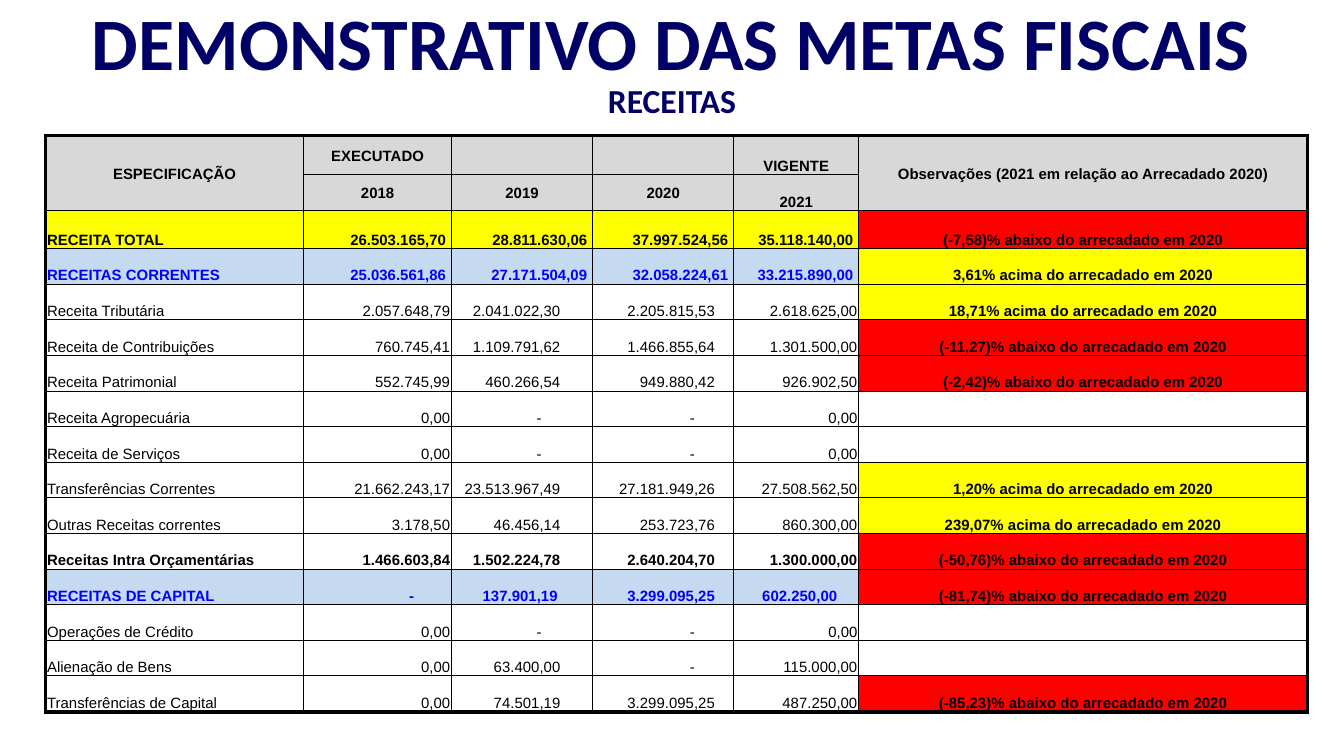
from lxml import etree
from pptx import Presentation
from pptx import util as u
from pptx.dml.color import RGBColor
from pptx.enum import shapes, text
from pptx.oxml import ns

NAVY = RGBColor(0x00, 0x00, 0x66)
BLACK = RGBColor(0x00, 0x00, 0x00)
WHITE = RGBColor(0xFF, 0xFF, 0xFF)
GRAY = RGBColor(0xD8, 0xD8, 0xD8)
YELLOW = RGBColor(0xFF, 0xFF, 0x00)
RED = RGBColor(0xFF, 0x00, 0x00)
LIGHT_BLUE = RGBColor(0xC5, 0xD9, 0xF1)
BLUE = RGBColor(0x00, 0x00, 0xFF)

# Content
HEADERS = [
    ["ESPECIFICAÇÃO", "EXECUTADO", "", "", "VIGENTE",
     "Observações (2021 em relação ao Arrecadado 2020)"],
    ["", "2018", "2019", "2020", "2021", ""],
]
# Row style, label, 2018, 2019, 2020, 2021, change against 2020
REVENUES = [
    ("total", "RECEITA TOTAL", "26.503.165,70", "28.811.630,06", "37.997.524,56", "35.118.140,00", "(-7,58)%"),
    ("group", "RECEITAS CORRENTES", "25.036.561,86", "27.171.504,09", "32.058.224,61", "33.215.890,00", "3,61%"),
    ("item", "Receita Tributária", "2.057.648,79", "2.041.022,30", "2.205.815,53", "2.618.625,00", "18,71%"),
    ("item", "Receita de Contribuições", "760.745,41", "1.109.791,62", "1.466.855,64", "1.301.500,00", "(-11,27)%"),
    ("item", "Receita Patrimonial", "552.745,99", "460.266,54", "949.880,42", "926.902,50", "(-2,42)%"),
    ("item", "Receita Agropecuária", "0,00", "-", "-", "0,00", ""),
    ("item", "Receita de Serviços", "0,00", "-", "-", "0,00", ""),
    ("item", "Transferências Correntes", "21.662.243,17", "23.513.967,49", "27.181.949,26", "27.508.562,50", "1,20%"),
    ("item", "Outras Receitas correntes", "3.178,50", "46.456,14", "253.723,76", "860.300,00", "239,07%"),
    ("intra", "Receitas Intra Orçamentárias", "1.466.603,84", "1.502.224,78", "2.640.204,70", "1.300.000,00", "(-50,76)%"),
    ("capital", "RECEITAS DE CAPITAL", "-", "137.901,19", "3.299.095,25", "602.250,00", "(-81,74)%"),
    ("item", "Operações de Crédito", "0,00", "-", "-", "0,00", ""),
    ("item", "Alienação de Bens", "0,00", "63.400,00", "-", "115.000,00", ""),
    ("item", "Transferências de Capital", "0,00", "74.501,19", "3.299.095,25", "487.250,00", "(-85,23)%"),
]
# Fill, font colour, bold, right margins of the four years
INDENTS = (0.01, 0.24, 0.14, 0.01)
STYLES = {
    "total": (YELLOW, BLACK, True, (0.04,) * 4),
    "group": (LIGHT_BLUE, BLUE, True, (0.04,) * 4),
    "item": (None, BLACK, False, INDENTS),
    "intra": (None, BLACK, True, INDENTS),
    "capital": (LIGHT_BLUE, BLUE, True, (0.01, 0.26, 0.14, 0.16)),
}
DASH_MARGINS = (0.28, 0.38, 0.29, 0.01)
SLIDE_WIDTH = 10
SLIDE_HEIGHT = SLIDE_WIDTH * 9 / 16
TABLE_LEFT, TABLE_TOP, TABLE_HEIGHT = 0.34, 1.01, 4.29
COLUMN_WIDTHS = [1.92, 1.1, 1.05, 1.05, 0.93, 3.34]
TOP_ROWS, LAST_ROW = [0.29, 0.27, 0.28], 0.27
LEFT, CENTER, RIGHT = text.PP_ALIGN.LEFT, text.PP_ALIGN.CENTER, text.PP_ALIGN.RIGHT
MIDDLE, BOTTOM = text.MSO_ANCHOR.MIDDLE, text.MSO_ANCHOR.BOTTOM


def add_run(paragraph, words, font_name, size, color, bold):
    run = paragraph.add_run()
    run.text = words
    run.font.name, run.font.size, run.font.bold = font_name, u.Pt(size), bold
    run.font.color.rgb = color


def add_heading(slide, words, size, left, top, width, height, anchor):
    frame = slide.shapes.add_textbox(*map(u.Inches, (left, top, width, height))).text_frame
    frame.word_wrap = True
    frame.vertical_anchor = anchor
    paragraph = frame.paragraphs[0]
    paragraph.alignment = CENTER
    add_run(paragraph, words, "Calibri", size, NAVY, True)
    return paragraph


def set_borders(cell, thick_sides):
    properties = cell._tc.get_or_add_tcPr()
    for index, side in enumerate("LRTB"):
        points = 2 if side in thick_sides else 0.5
        line = etree.Element(ns.qn(f"a:ln{side}"), w=str(u.Pt(points)))
        fill = etree.SubElement(line, ns.qn("a:solidFill"))
        etree.SubElement(fill, ns.qn("a:srgbClr"), val=str(BLACK))
        properties.insert(index, line)


def fill_cell(cell, words, fill, color, bold, alignment, anchor, right=0.01):
    cell.margin_left, cell.margin_top = u.Inches(0.01), u.Inches(0.01)
    cell.margin_right, cell.margin_bottom = u.Inches(right), 0
    cell.vertical_anchor = anchor
    if fill is None:
        cell.fill.background()
    else:
        cell.fill.solid()
        cell.fill.fore_color.rgb = fill
    paragraph = cell.text_frame.paragraphs[0]
    paragraph.alignment = alignment
    if words:
        add_run(paragraph, words, "Arial", 8, color, bold)
    else:  # keep empty cells from stretching their row
        etree.SubElement(paragraph._p, ns.qn("a:endParaRPr"), sz="800")


presentation = Presentation()
presentation.slide_width = u.Inches(SLIDE_WIDTH)
presentation.slide_height = u.Inches(SLIDE_HEIGHT)
slide = presentation.slides.add_slide(presentation.slide_layouts[6])

# White panel behind the table
panel = slide.shapes.add_shape(
    shapes.MSO_SHAPE.RECTANGLE, 0, u.Inches(TABLE_TOP),
    u.Inches(SLIDE_WIDTH), u.Inches(SLIDE_HEIGHT - TABLE_TOP))
panel.shadow.inherit = False
panel.fill.solid()
panel.fill.fore_color.rgb = WHITE
panel.line.color.rgb = WHITE
panel.line.width = u.Pt(0.75)

# Title and subtitle
add_heading(slide, "DEMONSTRATIVO DAS METAS FISCAIS", 39.6, 0.34, 0.06, 9.31, 0.49, MIDDLE)
subtitle = add_heading(slide, "RECEITAS", 18, 2.71, 0.58, 4.58, 0.35, text.MSO_ANCHOR.TOP)
subtitle.line_spacing = 0.9

# Table grid
row_count, column_count = len(HEADERS) + len(REVENUES), len(COLUMN_WIDTHS)
table = slide.shapes.add_table(
    row_count, column_count, u.Inches(TABLE_LEFT), u.Inches(TABLE_TOP),
    u.Inches(sum(COLUMN_WIDTHS)), u.Inches(TABLE_HEIGHT)).table
table.first_row = table.horz_banding = False
for column, width in zip(table.columns, COLUMN_WIDTHS):
    column.width = u.Inches(width)
middle_count = row_count - len(TOP_ROWS) - 1
middle_height = (TABLE_HEIGHT - sum(TOP_ROWS) - LAST_ROW) / middle_count
for row, height in zip(table.rows, TOP_ROWS + [middle_height] * middle_count + [LAST_ROW]):
    row.height = u.Inches(height)

# Header rows
for row_index, labels in enumerate(HEADERS):
    for column_index, label in enumerate(labels):
        anchor = BOTTOM if column_index == 4 else MIDDLE
        fill_cell(table.cell(row_index, column_index), label, GRAY, BLACK, True, CENTER, anchor)
for column_index in (0, column_count - 1):
    table.cell(0, column_index).merge(table.cell(1, column_index))

# Revenue rows
for row_index, (style, label, *amounts, change) in enumerate(REVENUES, len(HEADERS)):
    fill, color, bold, margins = STYLES[style]
    cells = table.rows[row_index].cells
    fill_cell(cells[0], label, fill, color, bold, LEFT, BOTTOM)
    for year, amount in enumerate(amounts):
        right = DASH_MARGINS[year] if amount == "-" else margins[year]
        fill_cell(cells[year + 1], amount, fill, color, bold, RIGHT, BOTTOM, right)
    below = change.startswith("(")
    note = f"{change} {'abaixo' if below else 'acima'} do arrecadado em 2020" if change else ""
    note_fill = (RED if below else YELLOW) if change else None
    fill_cell(cells[column_count - 1], note, note_fill, BLACK, True, CENTER, BOTTOM)

# Thin inner lines, thick outer frame
for row_index in range(row_count):
    for column_index in range(column_count):
        edges = {"L": column_index == 0, "R": column_index == column_count - 1,
                 "T": row_index == 0, "B": row_index == row_count - 1}
        set_borders(table.cell(row_index, column_index), [side for side, outer in edges.items() if outer])

presentation.save("out.pptx")
